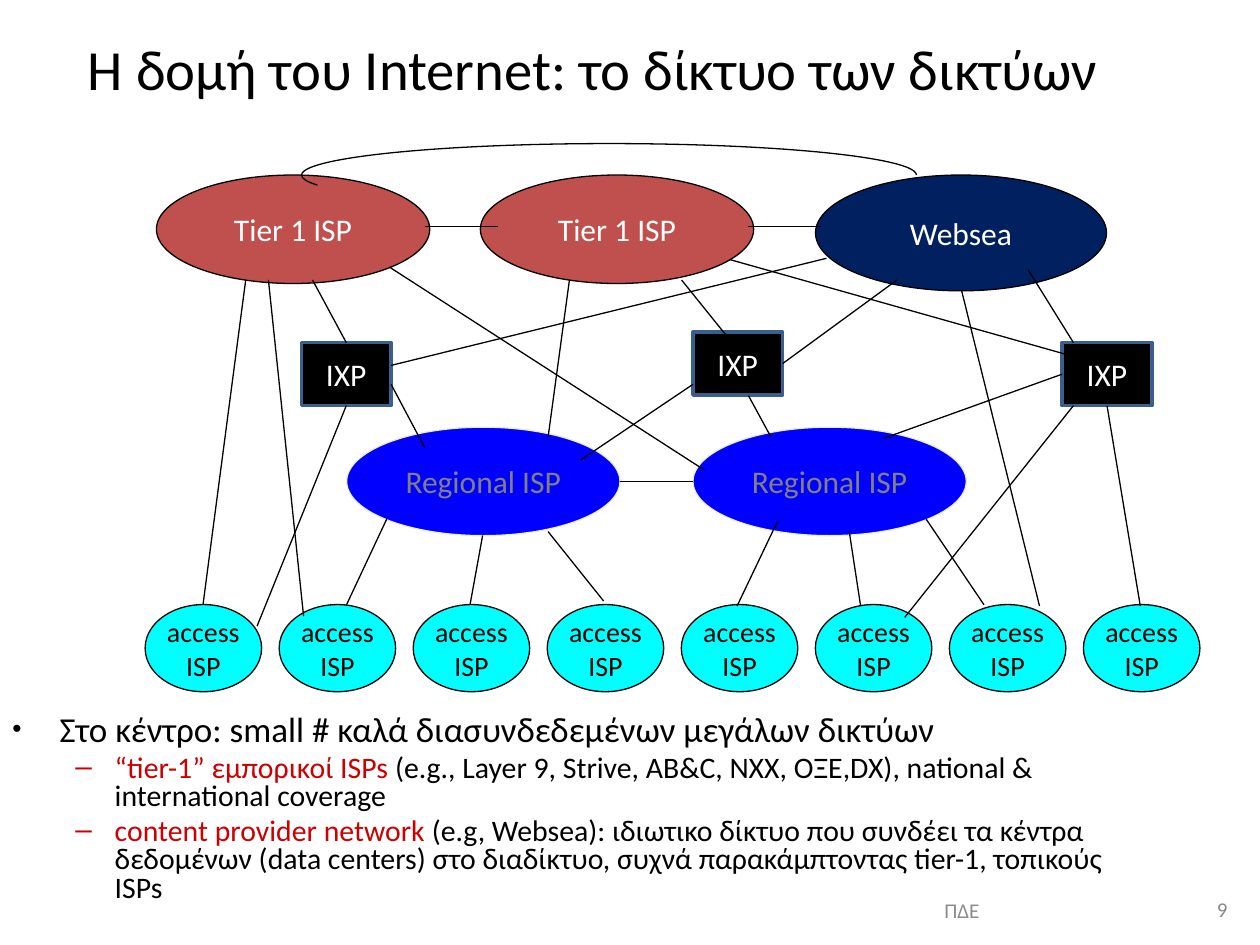
from pptx import Presentation
from pptx import util as u
from pptx.dml.color import RGBColor
from pptx.enum import shapes, text
from pptx.oxml.ns import qn
from lxml import etree

THEME = {
    "font": "Calibri",
    "ink": "000000", "paper": "FFFFFF", "accent": "CC0000",
    "regional_text": "808080", "footer": "8C8C8C", "number": "898989",
    "title_size": 32.4, "point_size": 20, "detail_size": 17,
    "node_size": 18, "access_size": 16, "footer_size": 12,
    "line": 0.75,
}
ALIGN = text.PP_ALIGN
SHAPE = shapes.MSO_SHAPE

# Content: each paragraph is a list of (words, colour)
TITLE = "Η δομή του Internet: το δίκτυο των δικτύων"
POINTS = [
    (0, [("Στο κέντρο: small # καλά διασυνδεδεμένων μεγάλων δικτύων", "ink")]),
    (1, [("“tier-1” εμπορικοί ISPs ", "accent"),
         ("(e.g., Layer 9, Strive, AB&C, NXX, ΟΞΕ,DX), national & "
          "international coverage", "ink")]),
    (1, [("content provider network ", "accent"),
         ("(e.g, Websea): ιδιωτικο δίκτυο που συνδέει τα κέντρα δεδομένων "
          "(data centers) στο διαδίκτυο, συχνά παρακάμπτοντας tier-1, "
          "τοπικούς ISPs", "ink")]),
]
LEVELS = [  # size, left margin, hanging indent, bullet, bullet size
    {"size": "point_size", "margin": 27, "hang": 27, "mark": "•", "scale": 75},
    {"size": "detail_size", "margin": 58.5, "hang": 22.5, "mark": "–", "scale": 100},
]

# Node kinds: preset, width, height, fill, line, line width, text colour, type size
KINDS = {
    "access": (SHAPE.OVAL, 66.6, 49.8, "00FFFF", "000000", 0.75, "ink", "access_size"),
    "regional": (SHAPE.OVAL, 156.2, 62, "0000FF", "EEECE1", 0.75, "regional_text", "node_size"),
    "exchange": (SHAPE.RECTANGLE, 51.2, 36, "000000", "3A5F8C", 2, "paper", "node_size"),
    "tier": (SHAPE.OVAL, 156.2, 62, "C0504D", "000000", 0.75, "paper", "node_size"),
    "provider": (SHAPE.OVAL, 166.3, 66.2, "002060", "000000", 0.75, "paper", "node_size"),
}
ACCESS_COUNT, ACCESS_LEFT, ACCESS_STEP = 8, 82.9, 76.6
NODES = [  # name, kind, label, left, top
    (f"access {i + 1}", "access", "access\nISP", ACCESS_LEFT + i * ACCESS_STEP, 345.5)
    for i in range(ACCESS_COUNT)
] + [
    ("regional west", "regional", "Regional ISP", 198.1, 244.1),
    ("regional east", "regional", "Regional ISP", 396, 244.1),
    ("IXP west", "exchange", "IXP", 172.3, 195.8),
    ("IXP middle", "exchange", "IXP", 396, 189.8),
    ("IXP east", "exchange", "IXP", 607, 195.8),
    ("tier west", "tier", "Tier 1 ISP", 89.4, 100),
    ("tier middle", "tier", "Tier 1 ISP", 274.5, 100),
    ("provider", "provider", "Websea", 466, 100),
]

# Links: an end is a point (x, y) or a rectangle's (name, side)
TOP, LEFT, BOTTOM, RIGHT = range(4)
LINKS = [
    # Peers side by side
    ((284.4, 129.6), (242.6, 129.6)), ((469.4, 129.6), (427.7, 129.6)),
    ((396, 275), (354.3, 275)),
    # Core networks to exchanges
    ((178.6, 160), ("IXP west", TOP)), ((472.3, 147.6), (223.5, 208.8)),
    ((389.5, 160), (421.2, 199.4)), ((512.6, 160), ("IXP middle", RIGHT)),
    ((587.5, 154.1), (613.4, 195.8)), ((416.9, 148.3), (608.4, 202.3)),
    # Core networks to regional and access networks
    ((325.4, 160), (313.2, 249.8)), ((222.5, 152.6), (402.5, 268.6)),
    ((140.4, 160), (116, 345.6)), ((153.4, 160), (173.5, 352.1)),
    ((549.4, 165.6), (594, 346.3)),
    # Exchanges to regional networks
    ((223.5, 219.6), (242.6, 255.6)), ((427.7, 226.1), (440.6, 249.8)),
    ((396, 219.6), (331.9, 262.8)), (("IXP east", LEFT), (504.7, 250.6)),
    # Exchanges to access networks
    (("IXP west", BOTTOM), (146.9, 357.8)), (("IXP east", BOTTOM), (651.6, 346.3)),
    ((613.4, 231.8), (517, 352.8)),
    # Regional to access networks
    ((221, 296.6), (198, 345.6)), ((275.8, 306), (268.6, 345.6)),
    ((313.2, 303.8), (344.9, 343.4)), ((444.2, 298.1), (421.2, 346.3)),
    ((485.3, 303.8), (491.8, 346.3)), ((529.2, 296.6), (562.3, 345.6)),
]


def colour(value):
    return RGBColor.from_string(THEME.get(value, value))


def apply(target, formats):
    for name, value in formats.items():
        setattr(target, name, value)


def add_span(para, words, ink, size):
    span = para.add_run()
    span.text = words
    apply(span.font, {"name": THEME["font"], "size": u.Pt(THEME[size])})
    span.font.color.rgb = colour(ink)


def add_lines(frame, label, ink, size, align):
    for i, words in enumerate(label.split("\n")):
        para = frame.add_paragraph() if i else frame.paragraphs[0]
        para.alignment = align
        add_span(para, words, ink, size)


def add_box(page, left, top, width, height, anchor=text.MSO_ANCHOR.MIDDLE):
    box = page.shapes.add_textbox(*map(u.Pt, (left, top, width, height)))
    apply(box.text_frame, {"word_wrap": True, "vertical_anchor": anchor})
    return box.text_frame


def add_node(page, kind, label, left, top):
    preset, width, height, fill, edge, weight, ink, size = KINDS[kind]
    node = page.shapes.add_shape(preset, *map(u.Pt, (left, top, width, height)))
    node.shadow.inherit = False
    node.fill.solid()
    node.fill.fore_color.rgb = colour(fill)
    node.line.color.rgb = colour(edge)
    node.line.width = u.Pt(weight)
    apply(node.text_frame, {"word_wrap": preset == SHAPE.RECTANGLE,
                            "vertical_anchor": text.MSO_ANCHOR.MIDDLE})
    add_lines(node.text_frame, label, ink, size, ALIGN.CENTER)
    return node


def add_link(page, nodes, ends):
    joined = [isinstance(end[0], str) for end in ends]
    points = [(0, 0) if join else end for join, end in zip(joined, ends)]
    link = page.shapes.add_connector(
        shapes.MSO_CONNECTOR.STRAIGHT, *(u.Pt(v) for point in points for v in point))
    for join, end, connect in zip(joined, ends, (link.begin_connect, link.end_connect)):
        if join:
            connect(nodes[end[0]], end[1])
    link.line.color.rgb = colour("ink")
    link.line.width = u.Pt(THEME["line"])
    etree.SubElement(link._element.spPr, qn("a:effectLst"))


def add_arc(page):
    arc = page.shapes.add_shape(SHAPE.ARC, *map(u.Pt, (172.3, 82.1, 351.4, 36)))
    arc.adjustments[0], arc.adjustments[1] = 106.82, 0
    arc.shadow.inherit = False
    arc.fill.background()
    arc.line.color.rgb = colour("ink")
    arc.line.width = u.Pt(THEME["line"])


def add_points(page):
    frame = add_box(page, 0, 405.4, 664.6, 119.5, text.MSO_ANCHOR.TOP)
    for i, (depth, spans) in enumerate(POINTS):
        level = LEVELS[depth]
        para = frame.add_paragraph() if i else frame.paragraphs[0]
        apply(para, {"level": depth, "line_spacing": 0.8,
                     "space_before": u.Pt(0.2 * THEME[level["size"]])})
        props = para._p.get_or_add_pPr()
        props.set("marL", str(u.Pt(level["margin"])))
        props.set("indent", str(-u.Pt(level["hang"])))
        etree.SubElement(props, qn("a:buSzPct"), val=str(level["scale"] * 1000))
        etree.SubElement(props, qn("a:buFont"), typeface="Arial")
        etree.SubElement(props, qn("a:buChar"), char=level["mark"])
        for words, ink in spans:
            add_span(para, words, ink, level["size"])


def main():
    deck = Presentation()
    apply(deck, {"slide_width": u.Pt(720), "slide_height": u.Pt(540)})
    page = deck.slides.add_slide(deck.slide_layouts[6])

    # Title and bullet points
    add_lines(add_box(page, 20.2, 13, 637.2, 51.1), TITLE, "ink", "title_size", ALIGN.CENTER)
    add_points(page)

    # Network diagram
    nodes = {name: add_node(page, *rest) for name, *rest in NODES}
    for ends in LINKS:
        add_link(page, nodes, ends)
    add_arc(page)

    # Footer and page number
    add_lines(add_box(page, 435.6, 509, 228.2, 22.3), "ΠΔΕ", "footer", "footer_size", ALIGN.CENTER)
    add_lines(add_box(page, 655.2, 509, 53.3, 21.6), "9", "number", "footer_size", ALIGN.RIGHT)

    deck.save("out.pptx")


if __name__ == "__main__":
    main()
